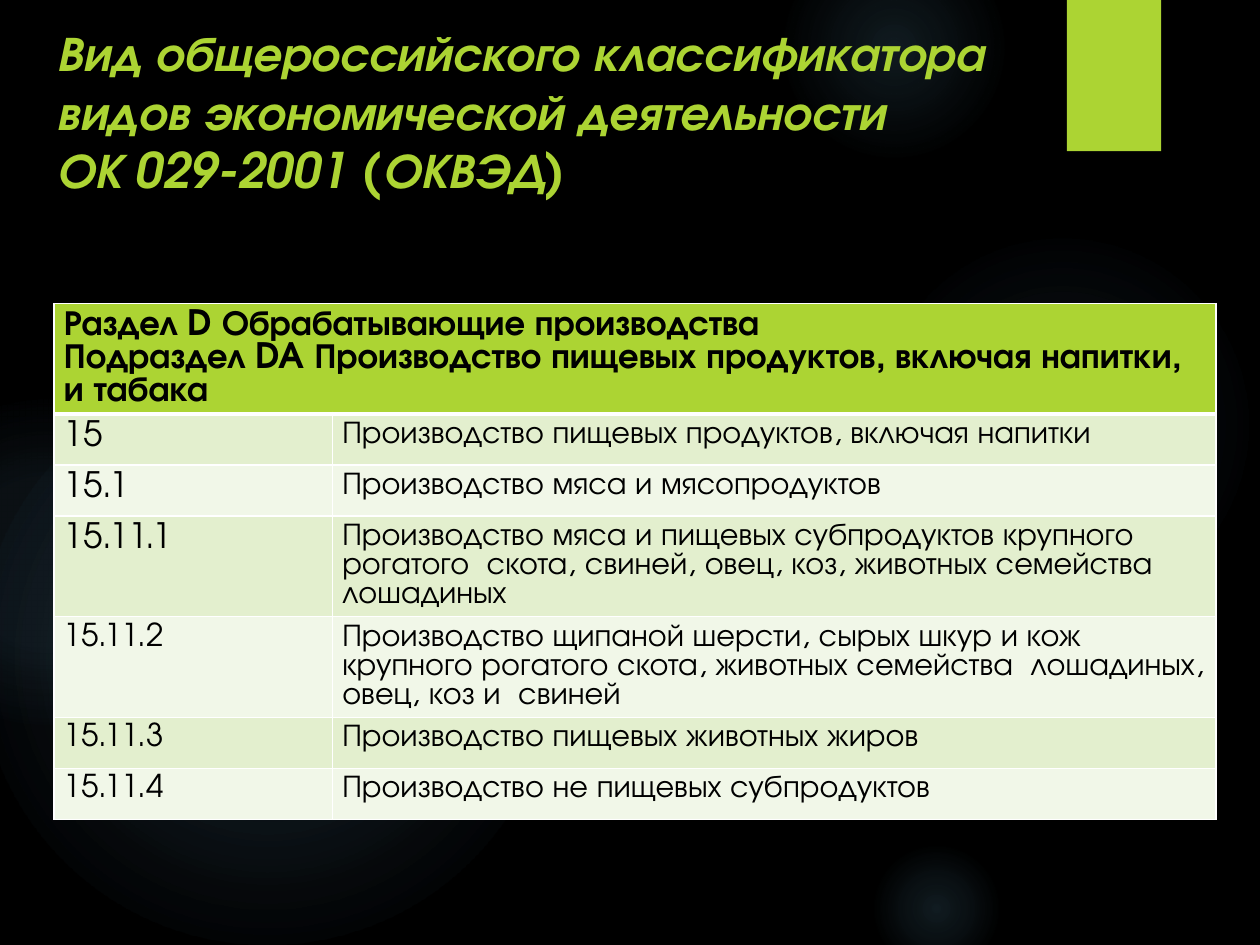
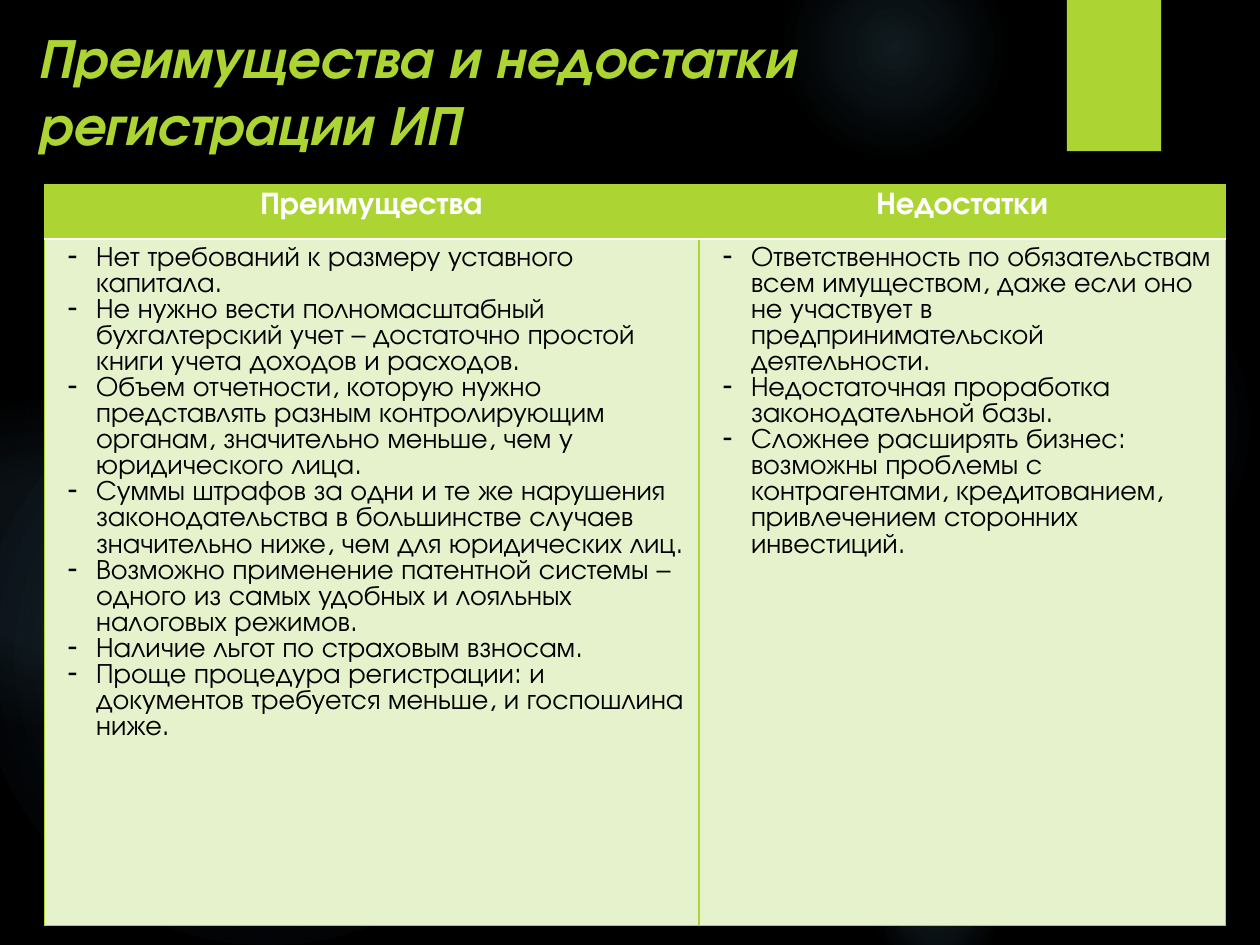
from typing import NamedTuple

from lxml import etree
from pptx import Presentation
from pptx.dml.color import RGBColor
from pptx.enum.shapes import MSO_SHAPE
from pptx.enum.text import MSO_ANCHOR, MSO_AUTO_SIZE, PP_ALIGN
from pptx.oxml.ns import qn
from pptx.util import Cm, Pt

OVAL, RECT = MSO_SHAPE.OVAL, MSO_SHAPE.RECTANGLE
LEFT, CENTER = PP_ALIGN.LEFT, PP_ALIGN.CENTER
TOP, NO_FIT = MSO_ANCHOR.TOP, MSO_AUTO_SIZE.NONE

FONT = "TeX Gyre Adventor"
BLACK = RGBColor(0x00, 0x00, 0x00)
WHITE = RGBColor(0xFF, 0xFF, 0xFF)
LIME = RGBColor(0xAC, 0xD4, 0x33)
SKY = RGBColor(0x7A, 0xC4, 0xF0)
PALE = RGBColor(0xE6, 0xF2, 0xCB)
BANDS = (RGBColor(0xE3, 0xEF, 0xCE), RGBColor(0xF1, 0xF7, 0xE8))
TIGHT = 0.93  # line height of table text, as a share of its size
LOOSE = 1.195  # the same for titles


class Orb(NamedTuple):
    """A glowing disc: place and size in cm, alpha in percent, fade end."""
    left: float
    top: float
    size: float
    core: int
    mid: int
    end: int


class Style(NamedTuple):
    size: int
    color: RGBColor = BLACK
    bold: bool = False
    italic: bool = False
    align: PP_ALIGN = LEFT
    dash: bool = False
    lead: float = TIGHT


class Grid(NamedTuple):
    """Table place, tracks and margin in cm; line widths in points."""
    left: float
    top: float
    cols: tuple[float, ...]
    rows: tuple[float, ...]
    side: float
    edge: RGBColor
    thin: float
    thick: float


ORBS = (
    Orb(17.5, 4.65, 7.82, 7, 6, 69),
    Orb(15.8, -1.27, 4.45, 14, 7, 73),
    Orb(17.5, 16.94, 2.74, 14, 7, 66),
    Orb(-0.43, 7.42, 11.63, 11, 10, 75),
    Orb(-2.34, 8.05, 6.55, 8, 8, 72),
)

HEAD = (
    "Раздел D Обрабатывающие производства",
    "Подраздел DA Производство пищевых продуктов, включая напитки, и табака",
)
# code, its text size, activity
CODES = (
    ("15", 20, "Производство пищевых продуктов, включая напитки"),
    ("15.1", 20, "Производство мяса и мясопродуктов"),
    ("15.11.1", 20, "Производство мяса и пищевых субпродуктов крупного рогатого  "
     "скота, свиней, овец, коз, животных семейства лошадиных"),
    ("15.11.2", 18, "Производство щипаной шерсти, сырых шкур и кож крупного рогатого "
     "скота, животных семейства  лошадиных, овец, коз и  свиней"),
    ("15.11.3", 18, "Производство пищевых животных жиров"),
    ("15.11.4", 18, "Производство не пищевых субпродуктов"),
)
SIDES = (
    ("Преимущества", (
        "Нет требований к размеру уставного капитала.",
        "Не нужно вести полномасштабный бухгалтерский учет – достаточно простой "
        "книги учета доходов и расходов.",
        "Объем отчетности, которую нужно представлять разным контролирующим "
        "органам, значительно меньше, чем у юридического лица.",
        "Суммы штрафов за одни и те же нарушения законодательства в большинстве "
        "случаев значительно ниже, чем для юридических лиц.",
        "Возможно применение патентной системы – одного из самых удобных и "
        "лояльных налоговых режимов.",
        "Наличие льгот по страховым взносам.",
        "Проще процедура регистрации: и документов требуется меньше, и "
        "госпошлина ниже.",
    )),
    ("Недостатки", (
        "Ответственность по обязательствам всем имуществом, даже если оно не "
        "участвует в предпринимательской деятельности.",
        "Недостаточная проработка законодательной базы.",
        "Сложнее расширять бизнес: возможны проблемы с контрагентами, "
        "кредитованием, привлечением сторонних инвестиций.",
    )),
)


def add_node(parent, tag: str, **attrs):
    return etree.SubElement(parent, qn(tag), {k: str(v) for k, v in attrs.items()})


def add_color(parent, color: RGBColor):
    return add_node(parent, "a:srgbClr", val=color)


def add_run(para, text: str, style: Style) -> None:
    run = para.add_run()
    run.text = text
    font = run.font
    font.name, font.size = FONT, Pt(style.size)
    font.bold, font.italic = style.bold, style.italic
    font.color.rgb = style.color


def format_para(para, style: Style) -> None:
    para.alignment = style.align
    para.line_spacing = Pt(round(style.size * style.lead, 1))
    para.space_before = para.space_after = Pt(0)
    if style.dash:
        props = para._p.get_or_add_pPr()
        props.set("marL", str(Cm(0.8)))
        props.set("indent", str(-Cm(0.57)))
        add_node(props, "a:buChar", char="-")


def draw_orb(slide, orb: Orb) -> None:
    disc = slide.shapes.add_shape(OVAL, Cm(orb.left), Cm(orb.top), Cm(orb.size), Cm(orb.size))
    disc.shadow.inherit = False
    disc.line.fill.background()
    disc.fill.gradient()
    grad = disc._element.spPr.find(qn("a:gradFill"))
    for child in list(grad):
        grad.remove(child)
    stops = add_node(grad, "a:gsLst")
    for pos, alpha in ((0, orb.core), (36, orb.mid), (orb.end, 0)):
        stop = add_node(stops, "a:gs", pos=pos * 1000)
        add_node(add_color(stop, SKY), "a:alpha", val=alpha * 1000)
    glow = add_node(grad, "a:path", path="circle")
    add_node(glow, "a:fillToRect", l=50000, t=50000, r=50000, b=50000)


def add_slide(prs, left: float, width: float, height: float, size: int, lines: tuple[str, ...]):
    """Add a slide with the shared backdrop and a title above it."""
    slide = prs.slides.add_slide(prs.slide_layouts[5])
    for orb in ORBS:
        draw_orb(slide, orb)
    flag = slide.shapes.add_shape(RECT, Cm(21.51), 0, Cm(1.9), Cm(3.05))
    flag.shadow.inherit = False
    flag.fill.solid()
    flag.fill.fore_color.rgb = LIME
    flag.line.fill.background()

    title = slide.shapes.title
    slide.shapes._spTree.append(title._element)
    title.left, title.top = Cm(left), Cm(0.33)
    title.width, title.height = Cm(width), Cm(height)
    frame = title.text_frame
    frame.word_wrap, frame.auto_size, frame.vertical_anchor = True, NO_FIT, TOP
    style = Style(size, LIME, bold=True, italic=True, lead=LOOSE)
    para = frame.paragraphs[0]
    format_para(para, style)
    for i, line in enumerate(lines):
        if i:
            para.add_line_break()
        add_run(para, line, style)
    return slide


def add_grid(slide, grid: Grid):
    """Add a table with a thick white rule under its first row."""
    table = slide.shapes.add_table(
        len(grid.rows), len(grid.cols), Cm(grid.left), Cm(grid.top),
        Cm(sum(grid.cols)), Cm(sum(grid.rows))).table
    table.horz_banding = False
    for col, width in zip(table.columns, grid.cols):
        col.width = Cm(width)
    for i, (row, height) in enumerate(zip(table.rows, grid.rows)):
        row.height = Cm(height)
        for cell in row.cells:
            cell.margin_left = cell.margin_right = Cm(grid.side)
            props = cell._tc.get_or_add_tcPr()
            for tag in ("a:lnL", "a:lnR", "a:lnT", "a:lnB"):
                rule = (i, tag) in ((0, "a:lnB"), (1, "a:lnT"))
                width = grid.thick if rule else grid.thin
                line = add_node(props, tag, w=Pt(width))
                add_color(add_node(line, "a:solidFill"), WHITE if rule else grid.edge)
    return table


def fill_cell(cell, paras: tuple[str, ...], style: Style, fill: RGBColor) -> None:
    cell.fill.solid()
    cell.fill.fore_color.rgb = fill
    frame = cell.text_frame
    for i, text in enumerate(paras):
        para = frame.add_paragraph() if i else frame.paragraphs[0]
        format_para(para, style)
        add_run(para, text, style)


def build_codes(prs) -> None:
    slide = add_slide(prs, 0.89, 20.4, 3.89, 28, (
        "Вид общероссийского классификатора видов экономической деятельности",
        "ОК 029-2001 (ОКВЭД)"))
    low, high = 1.03, 2.03
    table = add_grid(slide, Grid(
        1.09, 6.12, (5.61, 17.81), (2.18, low, low, high, high, low, low),
        0.2, WHITE, 1, 3))
    table.cell(0, 0).merge(table.cell(0, 1))
    fill_cell(table.cell(0, 0), HEAD, Style(20, bold=True), LIME)
    for i, (code, size, name) in enumerate(CODES):
        band = BANDS[i % 2]
        fill_cell(table.cell(i + 1, 0), (code,), Style(size), band)
        fill_cell(table.cell(i + 1, 1), (name,), Style(18), band)


def build_sides(prs) -> None:
    slide = add_slide(prs, 0.5, 20.8, 1.02, 32, ("Преимущества и недостатки регистрации ИП",))
    table = add_grid(slide, Grid(
        0.89, 3.73, (13.2, 10.62), (1.09, 13.84), 0.25, LIME, 0.75, 1.5))
    for i, (name, points) in enumerate(SIDES):
        fill_cell(table.cell(0, i), (name,), Style(18, WHITE, bold=True, align=CENTER), LIME)
        fill_cell(table.cell(1, i), points, Style(16, dash=True), PALE)


def main() -> None:
    prs = Presentation()
    prs.slide_width, prs.slide_height = Cm(25.4), Cm(19.05)
    back = prs.slide_master.background.fill
    back.solid()
    back.fore_color.rgb = BLACK
    build_codes(prs)
    build_sides(prs)
    prs.save("out.pptx")


if __name__ == "__main__":
    main()
